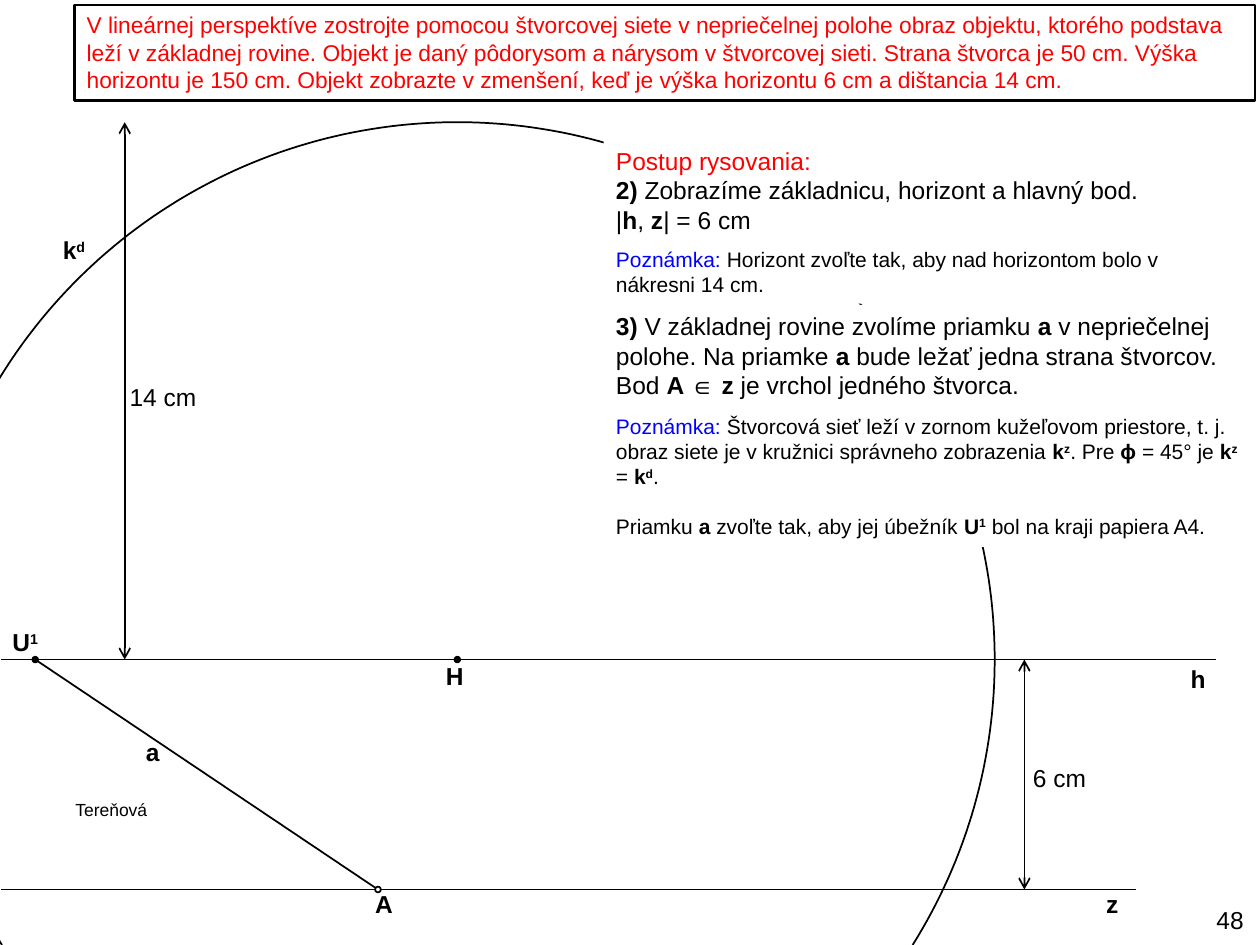
"""Builds the slide on drawing the base line, the horizon and line a in linear perspective."""
import math

from lxml import etree
from pptx import Presentation
from pptx import util as u
from pptx.dml.color import RGBColor
from pptx.enum import shapes, text
from pptx.oxml.ns import qn

THEME = {
    "font": "Arial",
    "black": RGBColor(0, 0, 0), "white": RGBColor(255, 255, 255),
    "red": RGBColor(255, 0, 0), "blue": RGBColor(0, 0, 255),
    "body": 14, "task": 13, "note": 12, "author": 10,
    "thin": 1, "frame": 1.5,
}

prs = Presentation()
prs.slide_width, prs.slide_height = u.Inches(10), u.Inches(7.5)
s = prs.slides.add_slide(prs.slide_layouts[6])
COL, ROW = prs.slide_width / 100, prs.slide_height / 75


def cells(*values):
    return [int(v * (ROW if i % 2 else COL)) for i, v in enumerate(values)]


def write(sp, paragraphs, size, wrap=True, gap=0):
    """Fill a box; run marks are b bold, ^ superscript, r red, n blue."""
    tf = sp.text_frame
    tf.word_wrap = wrap
    tf.auto_size = text.MSO_AUTO_SIZE.SHAPE_TO_FIT_TEXT
    tf.vertical_anchor = text.MSO_ANCHOR.TOP
    for i, runs in enumerate(paragraphs):
        p = tf.add_paragraph() if i else tf.paragraphs[0]
        p.alignment = text.PP_ALIGN.LEFT
        if i and gap:
            p.space_before = u.Pt(gap)
        for words, marks in runs:
            r = p.add_run()
            r.text = words
            f = r.font
            f.name, f.size, f.bold = THEME["font"], u.Pt(size), "b" in marks
            f.color.rgb = THEME["red" if "r" in marks else "blue" if "n" in marks else "black"]
            if "^" in marks:
                r._r.get_or_add_rPr().set("baseline", "30000")
    return tf


horizon, base, top = 52.35, 70.6, 9.7
center, radius = 36.3, horizon - top
vanishing, corner = 2.8, 30

# x1, y1, x2, y2, arrows
lines = [
    (0.1, horizon, 96.5, horizon, False),
    (0.1, base, 90.2, base, False),
    (81.3, horizon, 81.3, base, True),
    (9.9, horizon, 9.9, top, True),
    (vanishing, horizon, corner, base, False),
]
for *ends, arrows in lines:
    c = s.shapes.add_connector(shapes.MSO_CONNECTOR.STRAIGHT, *cells(*ends))
    c.line.color.rgb = THEME["black"]
    c.line.width = u.Pt(THEME["thin"])
    if arrows:
        for end in ("a:headEnd", "a:tailEnd"):
            etree.SubElement(c.line._ln, qn(end)).set("type", "arrow")
    etree.SubElement(c._element.spPr, qn("a:effectLst"))

start = math.asin((75 - horizon) / radius)
sweep, steps = math.pi + 2 * start, 240
points = [
    cells(center + radius * math.cos(start - sweep * i / steps),
          horizon + radius * math.sin(start - sweep * i / steps))
    for i in range(steps + 1)
]
arc = s.shapes.build_freeform(*points[0])
arc.add_line_segments(points[1:], close=False)
circle = arc.convert_to_shape()
circle.fill.background()
circle.line.color.rgb = THEME["black"]
circle.line.width = u.Pt(THEME["thin"])
circle.shadow.inherit = False

dot = 0.45
for x, y, fill in [(center, horizon, "black"), (vanishing, horizon, "black"), (corner, base, "white")]:
    sp = s.shapes.add_shape(shapes.MSO_SHAPE.OVAL, *cells(x - dot / 2, y - dot / 2, dot, dot))
    sp.fill.solid()
    sp.fill.fore_color.rgb = THEME[fill]
    sp.line.color.rgb = THEME["black"]
    sp.line.width = u.Pt(THEME["thin"])
    sp.shadow.inherit = False

labels = [
    (93.5, 52.2, 3.2, [("h", "b")]),
    (86.8, 70.1, 3, [("z", "b")]),
    (34.4, 52, 3.4, [("H", "b")]),
    (81, 60.1, 6.3, [("6 cm", "")]),
    (9.3, 29.8, 7.3, [("14 cm", "")]),
    (4, 18.2, 3.9, [("k", "b"), ("d", "b^")]),
    (28.8, 70.1, 3.4, [("A", "b")]),
    (0, 49.3, 4.2, [("U", "b"), ("1", "b^")]),
    (10.6, 58, 3.1, [("a", "b")]),
]
for x, y, w, runs in labels:
    write(s.shapes.add_textbox(*cells(x, y, w, 3.4)), [runs], THEME["body"], wrap=False)

# top, width, height, size, gap, paragraphs
steps_text = [
    (11.1, 44, 8.1, "body", 0, [
        [("Postup rysovania:", "r")],
        [("2)", "b"), (" Zobrazíme základnicu, horizont a hlavný bod.", "")],
        [("|", ""), ("h", "b"), (", ", ""), ("z", "b"), ("| = 6 cm", "")]]),
    (19.1, 48.3, 5, "note", 0, [
        [("Poznámka:", "n"),
         (" Horizont zvoľte tak, aby nad horizontom bolo v nákresni 14 cm.", "")]]),
    (24.2, 52.1, 8.1, "body", 0, [
        [("3)", "b"), (" V základnej rovine zvolíme priamku ", ""), ("a", "b"),
         (" v nepriečelnej polohe. Na priamke ", ""), ("a", "b"),
         (" bude ležať jedna strana štvorcov. Bod ", ""), ("A ", "b"), ("∈ ", ""),
         ("z", "b"), (" je vrchol jedného štvorca.", "")]]),
    (32.3, 52.1, 11.1, "note", 14, [
        [("Poznámka:", "n"),
         (" Štvorcová sieť leží v zornom kužeľovom priestore, t. j. obraz siete je "
          "v kružnici správneho zobrazenia ", ""),
         ("k", "b"), ("z", "b^"), (". Pre ", ""), ("ϕ ", "b"), ("= 45° je ", ""),
         ("k", "b"), ("z", "b^"), (" = ", ""), ("k", "b"), ("d", "b^"), (".", "")],
        [("Priamku ", ""), ("a", "b"), (" zvoľte tak, aby jej úbežník ", ""),
         ("U", "b"), ("1", "b^"), (" bol na kraji papiera A4.", "")]]),
]
for y, w, h, size, gap, paragraphs in steps_text:
    sp = s.shapes.add_shape(shapes.MSO_SHAPE.RECTANGLE, *cells(47.9, y, w, h))
    sp.fill.solid()
    sp.fill.fore_color.rgb = THEME["white"]
    sp.line.fill.background()
    sp.shadow.inherit = False
    write(sp, paragraphs, THEME[size], gap=gap)

task = s.shapes.add_shape(shapes.MSO_SHAPE.RECTANGLE, *cells(5.9, 0.4, 93.7, 7.6))
task.fill.background()
task.line.color.rgb = THEME["black"]
task.line.width = u.Pt(THEME["frame"])
task.shadow.inherit = False
write(task, [[(
    "V lineárnej perspektíve zostrojte pomocou štvorcovej siete v nepriečelnej polohe obraz "
    "objektu, ktorého podstava leží v základnej rovine. Objekt je daný pôdorysom a nárysom "
    "v štvorcovej sieti. Strana štvorca je 50 cm. Výška horizontu je 150 cm. Objekt zobrazte "
    "v zmenšení, keď je výška horizontu 6 cm a dištancia 14 cm.", "r")]], THEME["task"])

tf = write(s.shapes.add_textbox(*cells(95.3, 71.3, 4.4, 3.4)), [[("48", "")]], THEME["body"], wrap=False)
tf.vertical_anchor = text.MSO_ANCHOR.MIDDLE
tf.paragraphs[0].alignment = text.PP_ALIGN.RIGHT
write(s.shapes.add_textbox(*cells(5, 62.9, 7.9, 2.7)), [[("Tereňová", "")]], THEME["author"], wrap=False)

prs.save("out.pptx")
